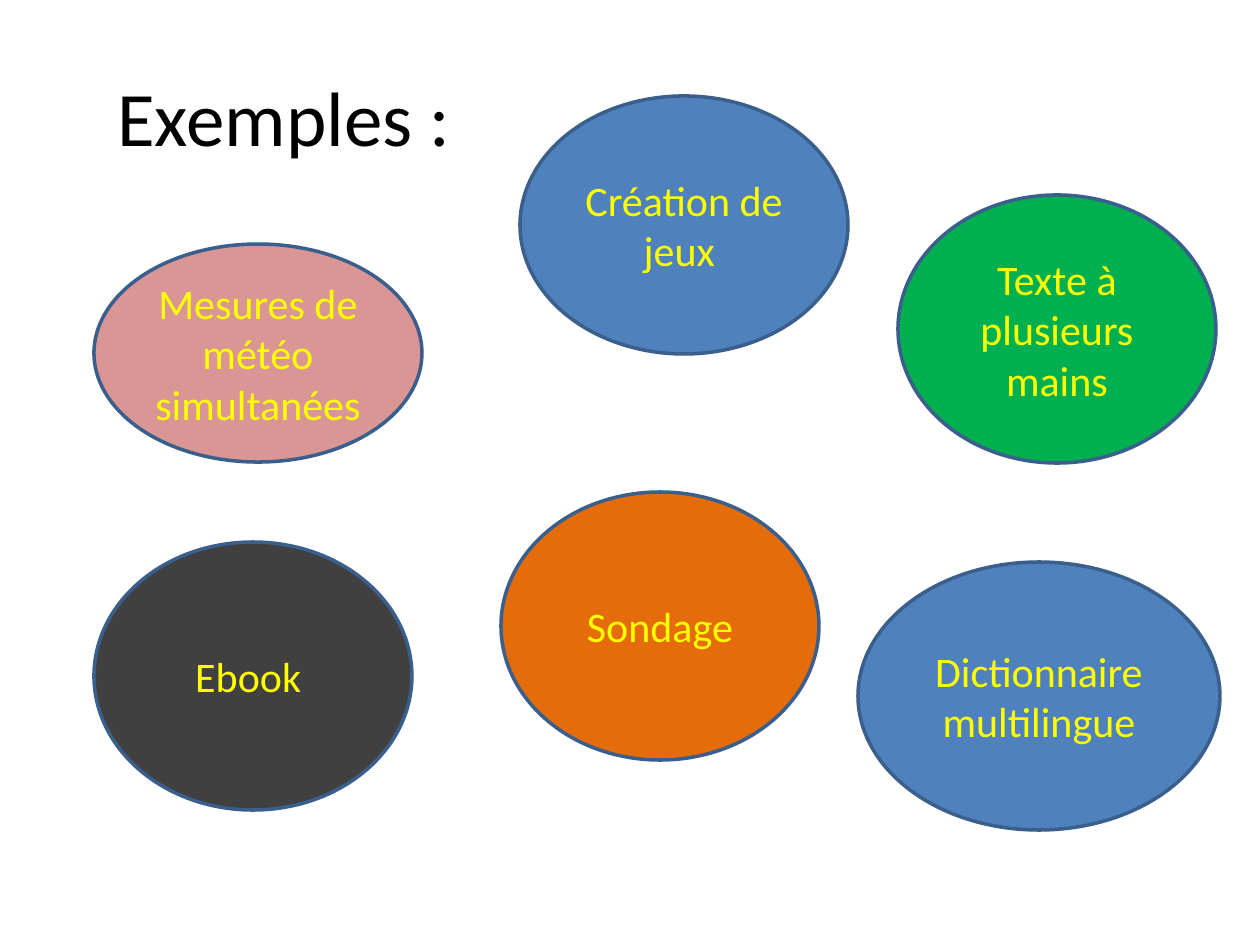
from pptx import Presentation
from pptx.dml.color import RGBColor
from pptx.enum.shapes import MSO_SHAPE
from pptx.enum.text import MSO_ANCHOR, PP_ALIGN
from pptx.util import Emu, Pt

PX_PER_INCH = 126
FONT = "Calibri"
OUTLINE = "3A5F8C"
YELLOW = "FFFF00"

# text, fill, (left, top, width, height)
EXAMPLES = [
    ("Mesures de météo simultanées", "D99694", (94, 244, 328, 218)),
    ("Création de jeux ", "4F81BD", (520, 96, 328, 258)),
    ("Texte à plusieurs mains", "00B050", (898, 195, 318, 268)),
    ("Ebook ", "404040", (94, 542, 318, 268)),
    ("Sondage", "E46C0A", (501, 492, 318, 268)),
    ("Dictionnaire multilingue", "4F81BD", (858, 562, 362, 268)),
]


def px(n):
    return Emu(round(n * 914400 / PX_PER_INCH))


def color(hex_value):
    return RGBColor.from_string(hex_value)


def set_text(shape, text, size, hex_value, align):
    tf = shape.text_frame
    tf.word_wrap = True
    tf.vertical_anchor = MSO_ANCHOR.MIDDLE
    tf.text = text
    p = tf.paragraphs[0]
    p.alignment = align
    font = p.runs[0].font
    font.name = FONT
    font.size = Pt(size)
    font.color.rgb = color(hex_value)


def add_title(s, text, box):
    title = s.shapes.add_textbox(*map(px, box))
    set_text(title, text, 44, "000000", PP_ALIGN.LEFT)


def add_bubble(s, text, fill, box):
    bubble = s.shapes.add_shape(MSO_SHAPE.OVAL, *map(px, box))
    bubble.shadow.inherit = False
    bubble.fill.solid()
    bubble.fill.fore_color.rgb = color(fill)
    bubble.line.color.rgb = color(OUTLINE)
    bubble.line.width = Pt(2)
    set_text(bubble, text, 24, YELLOW, PP_ALIGN.CENTER)


def main():
    prs = Presentation()
    prs.slide_width = px(1260)
    prs.slide_height = px(945)
    s = prs.slides.add_slide(prs.slide_layouts[6])
    add_title(s, "Exemples :", (105, 37, 1113, 158))
    for text, fill, box in EXAMPLES:
        add_bubble(s, text, fill, box)
    prs.save("out.pptx")


if __name__ == "__main__":
    main()
